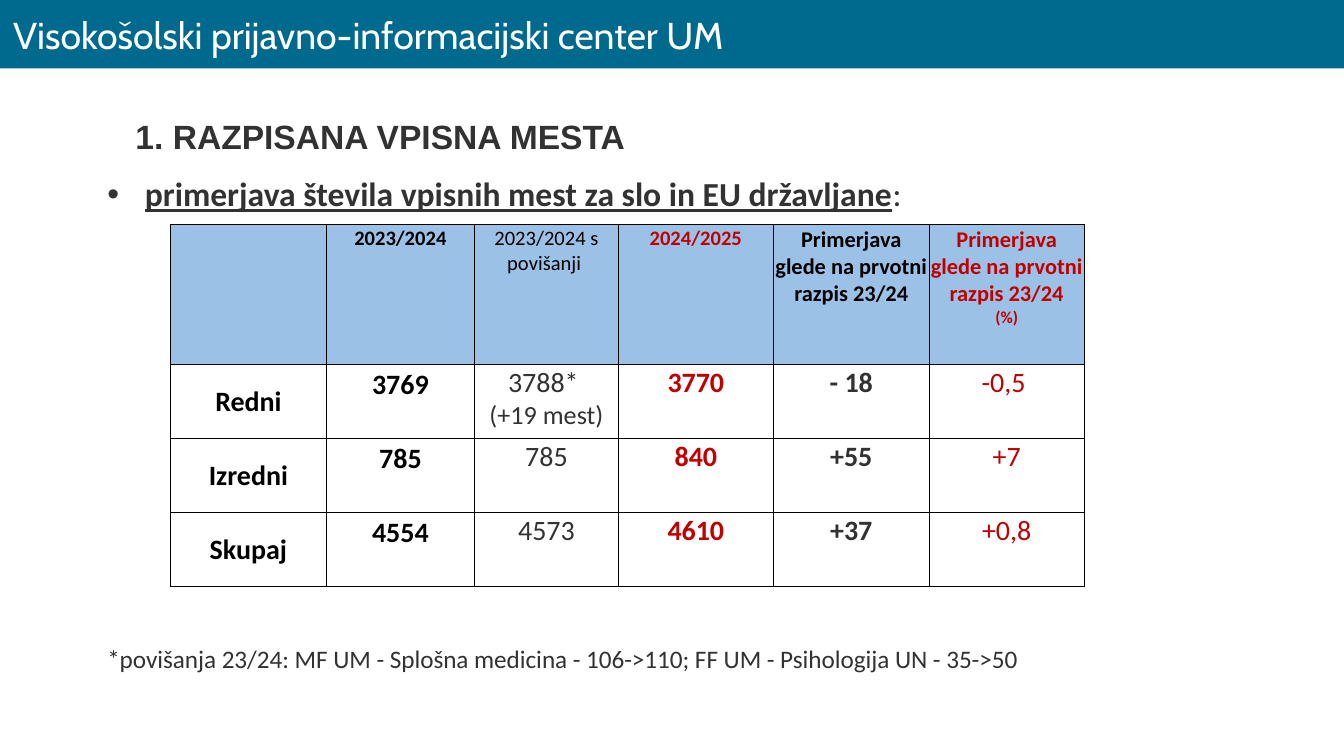
from lxml.etree import SubElement
from pptx import Presentation
from pptx.dml.color import RGBColor
from pptx.enum.shapes import MSO_SHAPE
from pptx.enum.text import MSO_ANCHOR, PP_ALIGN
from pptx.oxml import parse_xml
from pptx.oxml.ns import nsdecls, qn
from pptx.util import Inches, Pt

COLORS = {
    "banner": "006A8E",
    "header": "9BC2E6",
    "text": "323232",
    "black": "000000",
    "red": "C00000",
    "white": "FFFFFF",
}
COLUMN_SHARES = [1.16, 1.11, 1.07, 1.16, 1.16, 1.16]
ROW_HEIGHTS = [1.04, 0.55, 0.55, 0.55]
HEADERS = [
    "",
    "2023/2024",
    "2023/2024 s povišanji ",
    "2024/2025",
    "Primerjava glede na prvotni razpis 23/24",
    "Primerjava glede na prvotni razpis 23/24\n(%)",
]
HEADER_SIZES = [11, 11, 11, 11, 12, 12]
HEADER_COLORS = ["black", "black", "black", "red", "black", "red"]
HEADER_BOLD = [True, True, False, True, True, True]
ENROLMENT = [
    ["Redni", "3769", "3788* \n(+19 mest)", "3770", "- 18", "-0,5 "],
    ["Izredni", "785", "785", "840", "+55", "+7"],
    ["Skupaj", "4554", "4573", "4610", "+37", "+0,8"],
]
BODY_COLORS = ["black", "black", "text", "red", "text", "red"]
BODY_BOLD = [True, True, False, True, True, False]
SECOND_LINE_SIZES = {"(%)": 9, "(+19 mest)": 14}


def rgb(name):
    return RGBColor.from_string(COLORS[name])


def style_run(run, size, color, bold=False, font="Calibri"):
    run.font.name = font
    run.font.size = Pt(size)
    run.font.bold = bold
    run.font.color.rgb = rgb(color)


def add_banner(slide, left, top, width, height):
    banner = slide.shapes.add_shape(
        MSO_SHAPE.RECTANGLE, Inches(left), Inches(top), Inches(width), Inches(height))
    banner.shadow.inherit = False
    banner.fill.solid()
    banner.fill.fore_color.rgb = rgb("banner")
    banner.line.fill.background()
    frame = banner.text_frame
    frame.vertical_anchor = MSO_ANCHOR.MIDDLE
    frame.text = "Visokošolski prijavno-informacijski center UM"
    frame.paragraphs[0].alignment = PP_ALIGN.LEFT
    style_run(frame.paragraphs[0].runs[0], 20, "white", font="Cabin")


def add_text_frame(slide, left, top, width, height, text):
    frame = slide.shapes.add_textbox(
        Inches(left), Inches(top), Inches(width), Inches(height)).text_frame
    frame.word_wrap = True
    frame.margin_left = frame.margin_right = Inches(0.1)
    frame.margin_top = frame.margin_bottom = Inches(0.1)
    frame.text = text
    return frame


def add_title(slide, left, top, width, height):
    frame = add_text_frame(slide, left, top, width, height, "1. RAZPISANA VPISNA MESTA")
    frame.vertical_anchor = MSO_ANCHOR.BOTTOM
    style_run(frame.paragraphs[0].runs[0], 18, "text", True, "Arial")


def add_comparison_text(slide, left, top, width, height):
    frame = add_text_frame(
        slide, left, top, width, height,
        "primerjava števila vpisnih mest za slo in EU državljane\n"
        "*povišanja 23/24: MF UM - Splošna medicina - 106->110; "
        "FF UM - Psihologija UN - 35->50")
    heading, footnote = frame.paragraphs
    properties = heading._p.get_or_add_pPr()
    properties.set("marL", str(Inches(0.28)))
    properties.set("indent", str(-Inches(0.28)))
    SubElement(properties, qn("a:buFont"), typeface="Arial")
    SubElement(properties, qn("a:buChar"), char="•")
    style_run(heading.runs[0], 18, "text", True)
    heading.runs[0].font.underline = True
    colon = heading.add_run()
    colon.text = ":"
    style_run(colon, 18, "text")
    footnote.space_before = Pt(230)
    style_run(footnote.runs[0], 13.5, "text")


def add_borders(cell):
    properties = cell._tc.get_or_add_tcPr()
    for index, side in enumerate(("lnL", "lnR", "lnT", "lnB")):
        properties.insert(index, parse_xml(
            f'<a:{side} {nsdecls("a")} w="{Pt(0.5)}"><a:solidFill>'
            f'<a:srgbClr val="{COLORS["black"]}"/></a:solidFill></a:{side}>'))


def fill_cell(cell, text, size, color, bold):
    cell.margin_left = cell.margin_right = cell.margin_top = Inches(0.01)
    cell.margin_bottom = 0
    cell.text_frame.text = text
    for paragraph in cell.text_frame.paragraphs:
        paragraph.alignment = PP_ALIGN.CENTER
        for run in paragraph.runs:
            style_run(run, SECOND_LINE_SIZES.get(run.text, size), color, bold)
    add_borders(cell)


def add_enrolment_table(slide, left, top, width):
    table = slide.shapes.add_table(
        len(ROW_HEIGHTS), len(COLUMN_SHARES), Inches(left), Inches(top),
        Inches(width), Inches(sum(ROW_HEIGHTS))).table
    table.first_row = table.horz_banding = False
    for column, share in zip(table.columns, COLUMN_SHARES):
        column.width = Inches(width * share / sum(COLUMN_SHARES))
    for row, height in zip(table.rows, ROW_HEIGHTS):
        row.height = Inches(height)
    for index, header in enumerate(HEADERS):
        cell = table.cell(0, index)
        cell.fill.solid()
        cell.fill.fore_color.rgb = rgb("header")
        fill_cell(cell, header, HEADER_SIZES[index], HEADER_COLORS[index], HEADER_BOLD[index])
    for row_index, values in enumerate(ENROLMENT, start=1):
        for index, value in enumerate(values):
            cell = table.cell(row_index, index)
            cell.fill.background()
            fill_cell(cell, value, 15, BODY_COLORS[index], BODY_BOLD[index])
        table.cell(row_index, 0).vertical_anchor = MSO_ANCHOR.MIDDLE
        table.cell(row_index, 1).margin_top = Inches(0.03)


def main():
    presentation = Presentation()
    presentation.slide_width = Inches(10)
    presentation.slide_height = Inches(10 * 9 / 16)
    slide = presentation.slides.add_slide(presentation.slide_layouts[6])
    add_title(slide, 0.91, 0.73, 5.2, 0.53)
    add_comparison_text(slide, 0.7, 1.19, 7.66, 4.01)
    add_banner(slide, 0, 0, 10, 0.51)
    add_enrolment_table(slide, 1.27, 1.67, 6.8)
    presentation.save("out.pptx")


if __name__ == "__main__":
    main()
